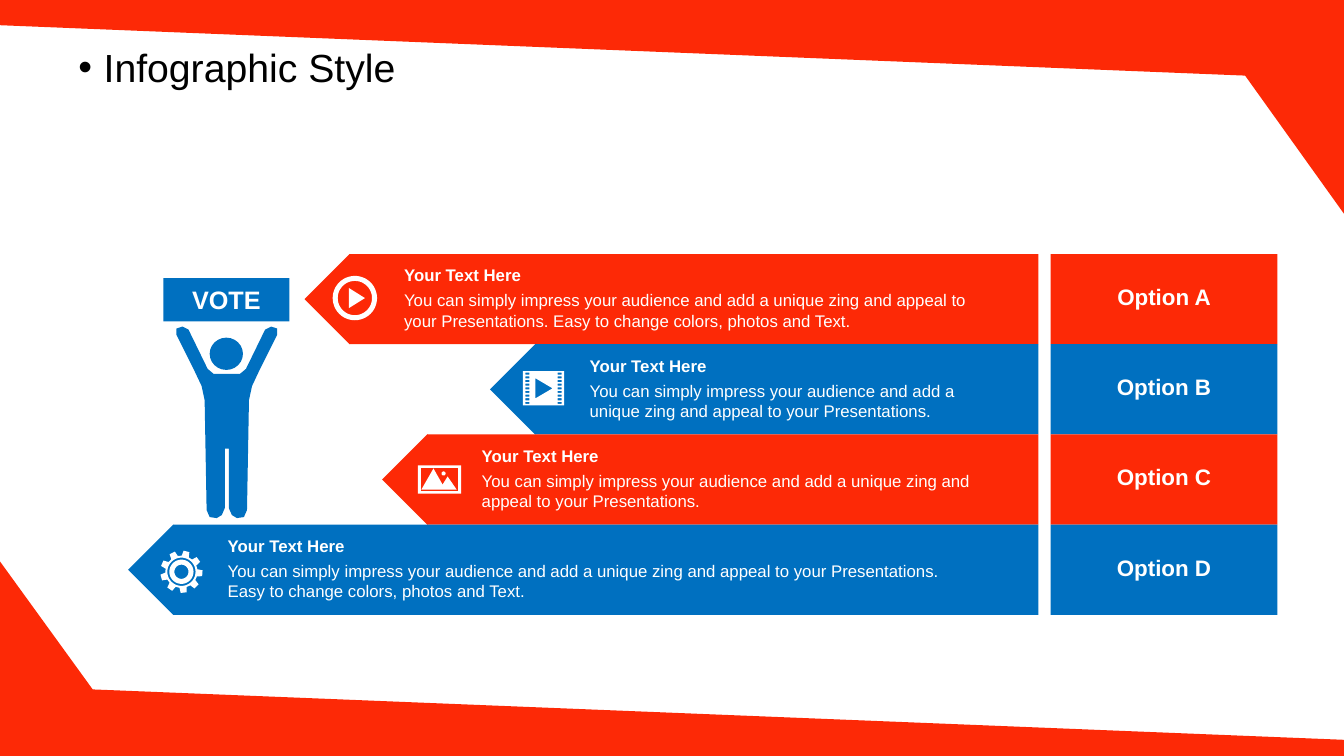
from math import cos, pi, sin

from lxml.etree import SubElement
from pptx import Presentation
from pptx.dml.color import RGBColor
from pptx.enum.shapes import MSO_SHAPE
from pptx.enum.text import MSO_ANCHOR, PP_ALIGN
from pptx.oxml.ns import qn
from pptx.util import Inches, Pt

RED = RGBColor(0xFD, 0x29, 0x06)
BLUE = RGBColor(0x00, 0x70, 0xC0)
WHITE = RGBColor(0xFF, 0xFF, 0xFF)
BLACK = RGBColor(0x00, 0x00, 0x00)

TITLE = "Infographic Style"
SIGN = "VOTE"
HEAD = "Your Text Here"
SHORT = ("You can simply impress your audience and add a unique zing "
         "and appeal to your Presentations.")
LONG = SHORT + " Easy to change colors, photos and Text."

# Rows: label, left tip of the arrow, text, colour, icon, icon offset from
# the tip and from the middle of the row
ROWS = [
    ("Option A", 3.02, LONG, RED, "play", 0.5, -0.01),
    ("Option B", 4.86, SHORT, BLUE, "film", 0.53, -0.01),
    ("Option C", 3.79, SHORT, RED, "photo", 0.57, 0),
    ("Option D", 1.27, LONG, BLUE, "gear", 0.53, 0.02),
]
TOP, BOTTOM = 2.52, 6.1
BAR_END, TEXT_END = 10.3, 9.75
TAG_LEFT, TAG_WIDTH = 10.42, 2.25

# Corner frames
FRAMES = [
    [(0, 0), (13.33, 0), (13.33, 2.12), (12.35, 0.75), (0, 0.25)],
    [(0, 5.57), (0.92, 6.84), (13.33, 7.34), (13.33, 7.5), (0, 7.5)],
]

# Voter: one half of the body, as distance from the middle line and height
MIDDLE = 2.25
LEG = [(0.02, 4.45), (0.02, 5.04)]
FOOT = [(0.05, 5.11), (0.1, 5.14), (0.17, 5.13), (0.2, 5.06)]
SIDE = [(0.22, 3.97), (0.25, 3.83), (0.33, 3.66)]
HAND = [(0.5, 3.32), (0.5, 3.26), (0.44, 3.24), (0.38, 3.27)]
NECK = [(0.19, 3.66), (0.13, 3.71)]


# Outlines
def box(x, y, w, h):
    """A rectangle around its centre."""
    left, top = x - w / 2, y - h / 2
    return [(left, top), (left + w, top), (left + w, top + h), (left, top + h)]


def polar(x, y, r, angle):
    t = angle * pi / 180
    return x + r * cos(t), y + r * sin(t)


def ring(x, y, r, count=48):
    return [polar(x, y, r, 360 * i / count) for i in range(count)]


def mirror(half, middle):
    """Join a half outline with its reflection."""
    right = [(middle + x, y) for x, y in half]
    left = [(middle - x, y) for x, y in reversed(half)]
    return right + left


# Icons: each is a list of outlines, where an inner one cuts a hole
def play(x, y):
    arrow = [(x - 0.06, y - 0.1), (x + 0.1, y), (x - 0.06, y + 0.1)]
    return [ring(x, y, 0.22), ring(x, y, 0.17), arrow]


def film(x, y, count=9):
    arrow = [(x - 0.08, y - 0.1), (x + 0.09, y), (x - 0.08, y + 0.1)]
    pitch = 0.29 / (count - 1)
    holes = [box(x + side * 0.16, y + (i - count // 2) * pitch, 0.04, 0.02)
             for side in (-1, 1) for i in range(count)]
    return [box(x, y, 0.41, 0.34), arrow] + holes


def photo(x, y):
    low = y + 0.1
    peaks = [(x - 0.18, low), (x - 0.06, y - 0.11), (x + 0.03, y + 0.05),
             (x + 0.08, y - 0.03), (x + 0.17, low)]
    sun = ring(x + 0.04, y - 0.06, 0.02)
    return [box(x, y, 0.43, 0.28), box(x, y, 0.37, 0.23), peaks, sun]


def gear(x, y, teeth=9, start=-76):
    root, tip = 0.16, 0.21
    tooth = [(-13, root), (-8, tip), (8, tip), (13, root)]
    edge = [polar(x, y, r, start + 360 * i / teeth + turn)
            for i in range(teeth) for turn, r in tooth]
    return [edge] + [ring(x, y, r) for r in (0.14, 0.12, 0.07)]


ICONS = {"play": play, "film": film, "photo": photo, "gear": gear}


# Drawing
def paint(shape, color):
    shape.shadow.inherit = False
    shape.fill.solid()
    shape.fill.fore_color.rgb = color
    shape.line.fill.background()


def draw(lines, color):
    pen = None
    for line in lines:
        first, *rest = [(Inches(x), Inches(y)) for x, y in line]
        if pen is None:
            pen = slide.shapes.build_freeform(*first, scale=1.0)
        else:
            pen.move_to(*first)
        pen.add_line_segments(rest, close=True)
    paint(pen.convert_to_shape(), color)


def block(kind, x, y, w, h, color):
    shape = slide.shapes.add_shape(kind, *map(Inches, (x, y, w, h)))
    paint(shape, color)


def write(text, x, y, w, h, size, color=WHITE, bold=False,
          align=PP_ALIGN.LEFT, anchor=MSO_ANCHOR.TOP):
    frame = slide.shapes.add_textbox(*map(Inches, (x, y, w, h))).text_frame
    frame.word_wrap = True
    frame.vertical_anchor = anchor
    para = frame.paragraphs[0]
    para.text = text
    para.alignment = align
    font = para.runs[0].font
    font.name, font.size, font.bold = "Arial", Pt(size), bold
    font.color.rgb = color
    return para


deck = Presentation()
deck.slide_width, deck.slide_height = Inches(13.33), Inches(7.5)
slide = deck.slides.add_slide(deck.slide_layouts[6])

# Frame and title
for frame in FRAMES:
    draw([frame], RED)
title = write(TITLE, 0.68, 0.43, 12.65, 0.79, 28, BLACK)
title.line_spacing, title.space_before = 0.9, Pt(10)
props = title._p.get_or_add_pPr()
props.set("marL", str(Inches(0.25)))
props.set("indent", str(-Inches(0.25)))
SubElement(props, qn("a:buFont")).set("typeface", "Arial")
SubElement(props, qn("a:buChar")).set("char", "•")

# Option rows: arrow, text, icon and tag
step = (BOTTOM - TOP) / len(ROWS)
for i, (label, tip, text, color, icon, right, down) in enumerate(ROWS):
    y = TOP + i * step
    start, left = tip + step / 2, tip + 0.89
    width = TEXT_END - left
    block(MSO_SHAPE.RECTANGLE, start, y, BAR_END - start, step, color)
    block(MSO_SHAPE.DIAMOND, tip, y, step, step, color)
    write(HEAD, left, y + 0.06, width, 0.3, 12, bold=True)
    write(text, left, y + 0.31, width, 0.5, 12)
    draw(ICONS[icon](tip + right, y + step / 2 + down), WHITE)
    block(MSO_SHAPE.RECTANGLE, TAG_LEFT, y, TAG_WIDTH, step, color)
    write(label, TAG_LEFT, y + 0.24, TAG_WIDTH, 0.4, 16, bold=True,
          align=PP_ALIGN.CENTER)

# Voter with sign
draw([mirror(LEG + FOOT + SIDE + HAND + NECK, MIDDLE)], BLUE)
block(MSO_SHAPE.OVAL, 2.08, 3.35, 0.33, 0.32, BLUE)
sign = (1.62, 2.76, 1.25, 0.43)
block(MSO_SHAPE.RECTANGLE, *sign, BLUE)
write(SIGN, *sign, 18, bold=True, align=PP_ALIGN.CENTER,
      anchor=MSO_ANCHOR.MIDDLE)

deck.save("out.pptx")
